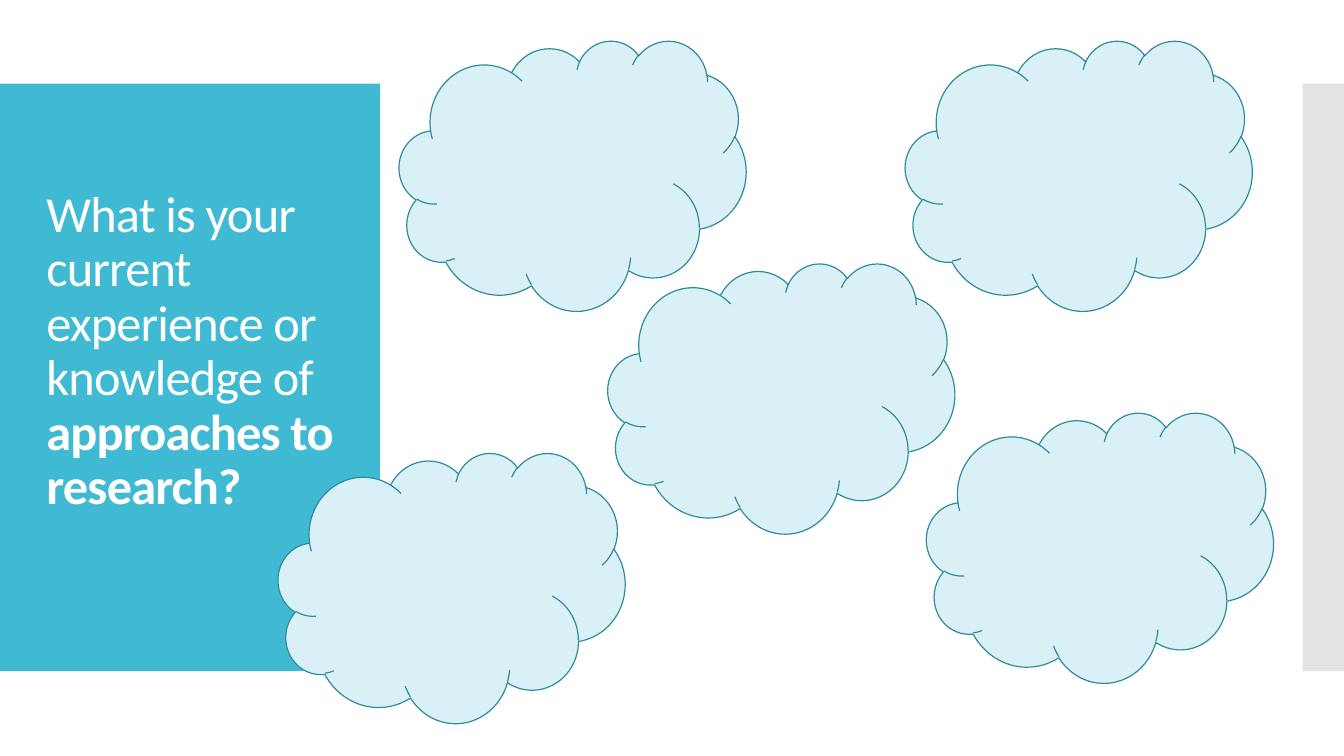
from dataclasses import dataclass

import pptx
import pptx.dml.color
import pptx.enum.shapes
import pptx.enum.text
import pptx.oxml
import pptx.oxml.ns
import pptx.util
from pptx.util import Inches


@dataclass(frozen=True)
class Theme:
    font: str = "Calibri"
    title_size: float = 36
    title_spacing: int = -60  # hundredths of a point
    title_color: str = "FFFFFF"
    panel: str = "40BAD2"
    edge: str = "C8C8C8"
    cloud_fill: str = "D9F1F6"
    cloud_line: str = "2F8A9B"
    line_width: float = 0.85


def rgb(value):
    return pptx.dml.color.RGBColor.from_string(value)


class SlideBuilder:
    def __init__(self, slide, theme):
        self.slide = slide
        self.theme = theme

    def add_shape(self, kind, left, top, width, height, fill, line=None):
        shape = self.slide.shapes.add_shape(
            kind, Inches(left), Inches(top), Inches(width), Inches(height))
        shape.shadow.inherit = False
        shape.fill.solid()
        shape.fill.fore_color.rgb = rgb(fill)
        if line:
            shape.line.color.rgb = rgb(line)
            shape.line.width = pptx.util.Pt(self.theme.line_width)
        else:
            shape.line.fill.background()
        return shape

    def add_panel(self, left, width, fill, opacity=100):
        shape = self.add_shape(pptx.enum.shapes.MSO_SHAPE.RECTANGLE,
                               left, 0.83, width, 5.83, fill)
        if opacity < 100:
            color = shape.fill._xPr.find(".//" + pptx.oxml.ns.qn("a:srgbClr"))
            alpha = pptx.oxml.parse_xml(
                f'<a:alpha {pptx.oxml.ns.nsdecls("a")} val="{opacity * 1000}"/>')
            color.append(alpha)

    def add_cloud(self, left, top):
        self.add_shape(pptx.enum.shapes.MSO_SHAPE.CLOUD, left, top, 3.44, 2.68,
                       self.theme.cloud_fill, self.theme.cloud_line)

    def set_title(self, plain, strong):
        title = self.slide.shapes.title
        # Bring the title in front of the panels
        self.slide.shapes._spTree.append(title._element)
        title.left, title.top = Inches(0.36), Inches(0.98)
        title.width, title.height = Inches(3.22), Inches(5.03)
        frame = title.text_frame
        frame.word_wrap = True
        frame.auto_size = pptx.enum.text.MSO_AUTO_SIZE.NONE
        frame.vertical_anchor = pptx.enum.text.MSO_ANCHOR.MIDDLE
        paragraph = frame.paragraphs[0]
        paragraph.alignment = pptx.enum.text.PP_ALIGN.LEFT
        paragraph.line_spacing = 0.9
        paragraph.text = plain
        paragraph.add_run().text = strong
        for run in paragraph.runs:
            run.font.name = self.theme.font
            run.font.size = pptx.util.Pt(self.theme.title_size)
            run.font.color.rgb = rgb(self.theme.title_color)
            run.font._element.set("spc", str(self.theme.title_spacing))
        paragraph.runs[-1].font.bold = True


def main():
    presentation = pptx.Presentation()
    presentation.slide_width = Inches(13.33)
    presentation.slide_height = Inches(7.5)
    theme = Theme()
    title_only = presentation.slide_layouts[5]
    builder = SlideBuilder(presentation.slides.add_slide(title_only), theme)

    # Side panels
    builder.add_panel(0, 3.77, theme.panel)
    builder.add_panel(12.92, 0.41, theme.edge, opacity=50)

    # Question
    builder.set_title("What is your current experience or knowledge of ",
                      "approaches to research?")

    # Empty thought clouds
    for left, top in [(3.96, 0.4), (6.03, 2.61), (9.19, 4.09),
                      (8.98, 0.4), (2.76, 4.49)]:
        builder.add_cloud(left, top)

    presentation.save("out.pptx")


if __name__ == "__main__":
    main()
